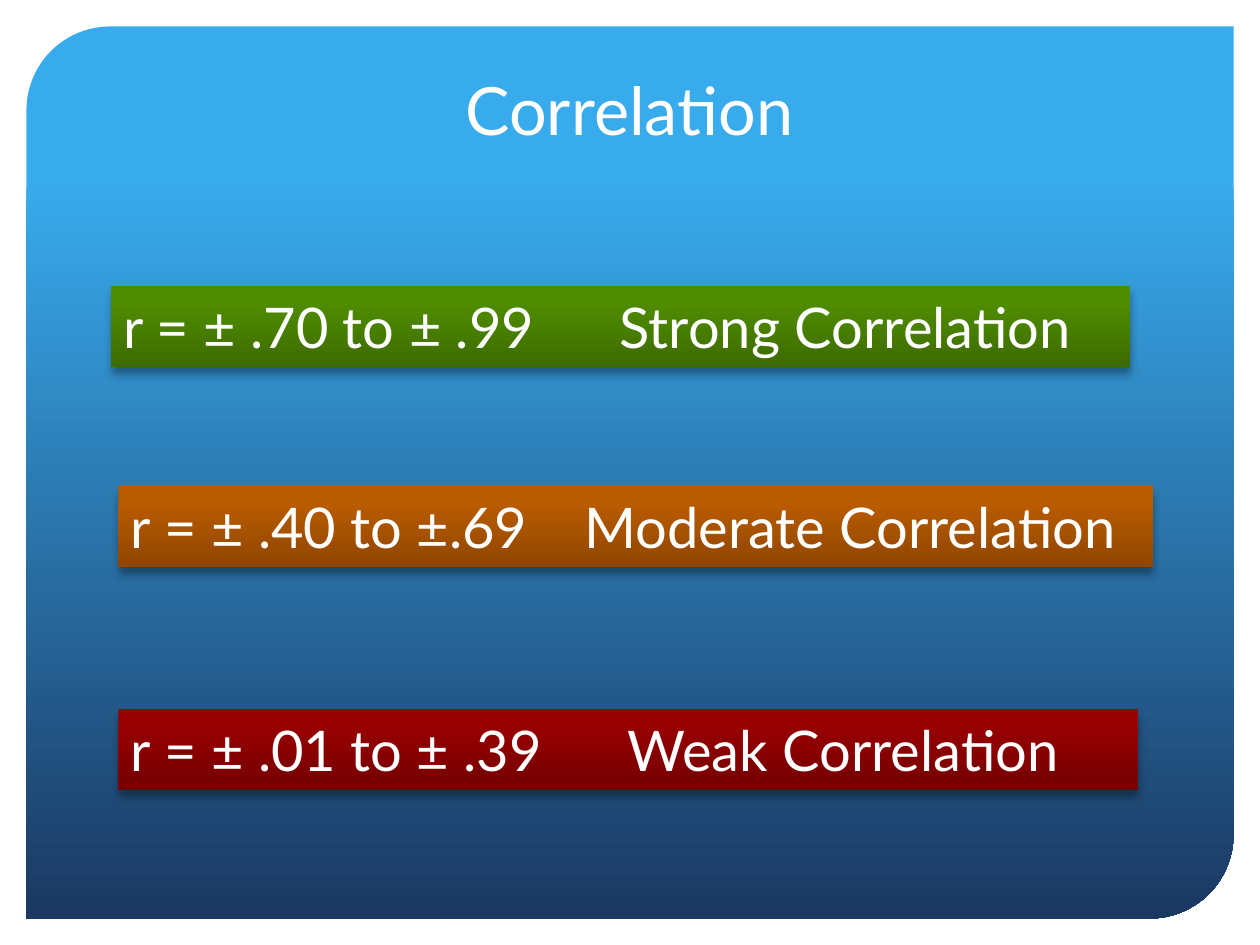
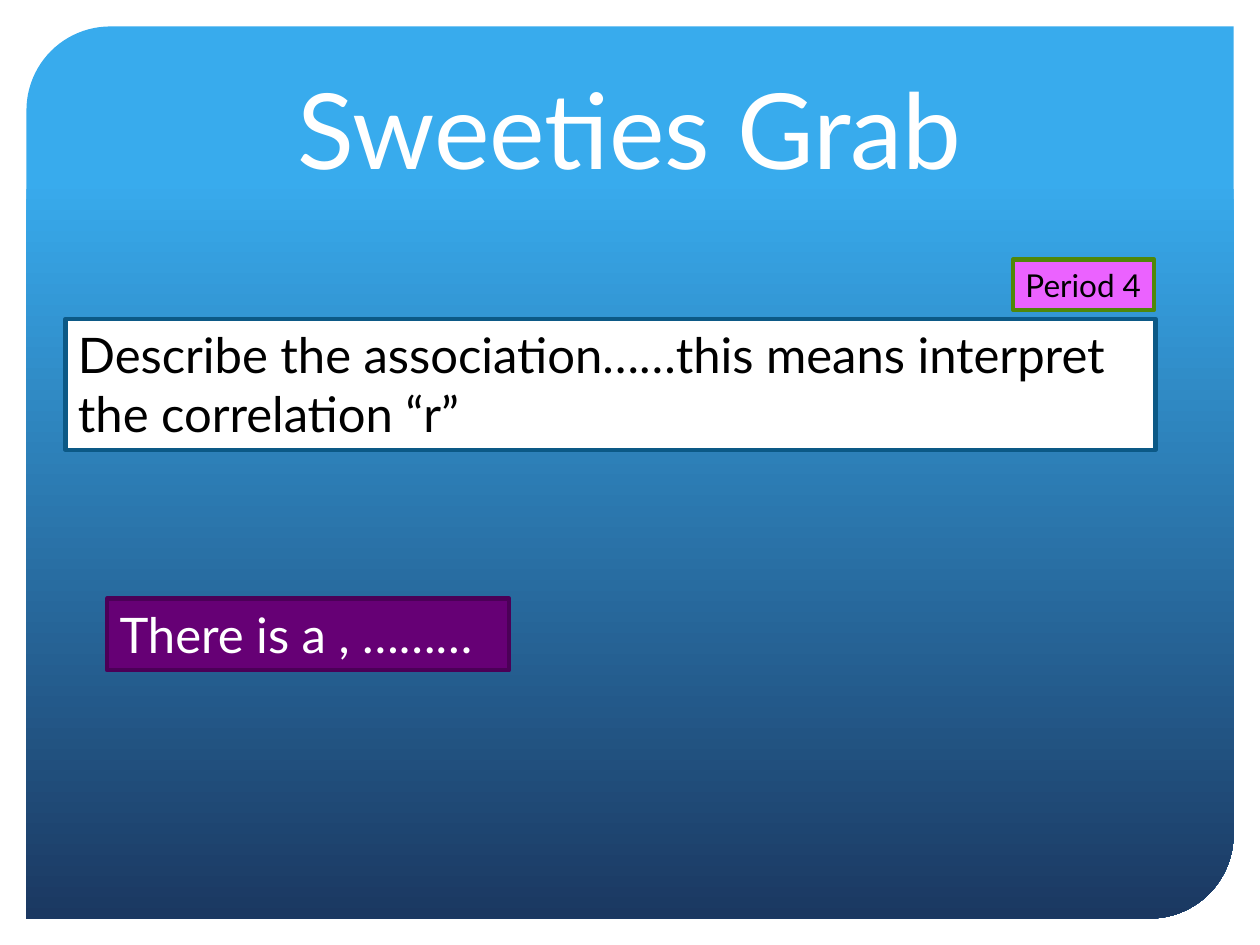
from lxml import etree
from pptx import Presentation
from pptx.dml.color import RGBColor
from pptx.enum.shapes import MSO_SHAPE
from pptx.enum.text import MSO_ANCHOR, MSO_AUTO_SIZE, PP_ALIGN
from pptx.oxml.ns import qn
from pptx.util import Inches, Pt

RECT, PANEL = MSO_SHAPE.RECTANGLE, MSO_SHAPE.ROUND_2_DIAG_RECTANGLE
TOP, BOTTOM = MSO_ANCHOR.TOP, MSO_ANCHOR.BOTTOM
GROW, FIXED = MSO_AUTO_SIZE.SHAPE_TO_FIT_TEXT, MSO_AUTO_SIZE.NONE
LEFT, CENTER = PP_ALIGN.LEFT, PP_ALIGN.CENTER

# Shared look
W, H = 10, 7.5
MARGIN = 0.21
FONT, WHITE, BLACK = "Lato", "FFFFFF", "000000"
PANEL_STOPS = ((17, "38ABED"), (100, "1B3861"))
TITLE_LEFT, TITLE_W = 0.85, 8.29

# Slide 1: range, strength, left, top, width, tab stop, light and dark colour
STRENGTHS = [
    ("r = ± .70 to ± .99", "Strong Correlation", 0.88, 2.27, 8.09, 3.94, "4F8C00", "3D6B00"),
    ("r = ± .40 to ±.69", "Moderate Correlation", 0.94, 3.86, 8.21, 3.6, "B95B00", "8F4600"),
    ("r = ± .01 to ± .39", "Weak Correlation", 0.94, 5.63, 8.09, 3.94, "970001", "740001"),
]
BAND_H = 0.64

# Slide 2: text, place, size, text colour, fill, line, wrap
PROMPTS = [
    ("There is a , ………", (0.85, 4.75, 3.19, 0.57), 28, WHITE, "660075", "4B0057", True),
    ("Describe the association……this means interpret the correlation “r”",
     (0.52, 2.53, 8.65, 1.04), 28, BLACK, WHITE, "0C5986", True),
    ("Period 4", (8.04, 2.06, 1.12, 0.4), 18, BLACK, "EB62FF", "508709", False),
]


def rgb(color):
    return RGBColor.from_string(color)


def add_box(s, kind, place):
    sp = s.shapes.add_shape(kind, *map(Inches, place))
    sp.shadow.inherit = False
    sp.line.fill.background()
    return sp


def fill_gradient(sp, stops):
    """Fill from top to bottom with two (percent, colour) stops."""
    sp.fill.gradient()
    sp.fill.gradient_angle = 270
    for stop, (percent, color) in zip(sp.fill.gradient_stops, stops):
        stop.position = percent / 100
        stop.color.rgb = rgb(color)


def add_shadow(sp):
    effects = sp.element.spPr.find(qn("a:effectLst"))
    shadow = etree.SubElement(effects, qn("a:outerShdw"), blurRad=str(Pt(5)),
                              dist=str(Pt(4)), dir="5400000", rotWithShape="0")
    color = etree.SubElement(shadow, qn("a:srgbClr"), val=BLACK)
    etree.SubElement(color, qn("a:alpha"), val="35000")


def write(sp, text, size, color=WHITE, align=LEFT, anchor=TOP, fit=GROW, wrap=True, tab=None):
    tf = sp.text_frame
    tf.word_wrap, tf.auto_size, tf.vertical_anchor = wrap, fit, anchor
    p = tf.paragraphs[0]
    p.alignment = align
    if tab:
        tabs = etree.SubElement(p._p.get_or_add_pPr(), qn("a:tabLst"))
        etree.SubElement(tabs, qn("a:tab"), pos=str(Inches(tab)), algn="l")
    r = p.add_run()
    r.text = text
    r.font.name, r.font.size = FONT, Pt(size)
    r.font.color.rgb = rgb(color)


def add_slide(prs, title, top, height, size):
    s = prs.slides.add_slide(prs.slide_layouts[5])
    sp = s.shapes.title
    sp.left, sp.top, sp.width, sp.height = map(Inches, (TITLE_LEFT, top, TITLE_W, height))
    write(sp, title, size, align=CENTER, anchor=BOTTOM, fit=FIXED)
    return s


def add_panel(s):
    """Draw the blue panel once, on the layout behind every title."""
    sp = add_box(s, PANEL, (MARGIN, MARGIN, W - 2 * MARGIN, H - 2 * MARGIN))
    sp.adjustments[0], sp.adjustments[1] = 0.094, 0
    fill_gradient(sp, PANEL_STOPS)
    sp.element.nvSpPr.cNvPr.set("id", "20")
    s.slide_layout.shapes[0].element.addprevious(sp.element)


def main():
    prs = Presentation()
    prs.slide_width, prs.slide_height = Inches(W), Inches(H)

    # Slide 1: strength bands
    s = add_slide(prs, "Correlation", 0.59, 0.64, 38)
    add_panel(s)
    for values, strength, left, top, width, tab, light, dark in STRENGTHS:
        sp = add_box(s, RECT, (left, top, width, BAND_H))
        fill_gradient(sp, ((20, light), (100, dark)))
        add_shadow(sp)
        write(sp, f"{values}\t{strength}", 32, tab=tab)

    # Slide 2: task prompts
    s = add_slide(prs, "Sweeties Grab", 0.42, 1.14, 60)
    for text, place, size, color, fill, line, wrap in PROMPTS:
        sp = add_box(s, RECT, place)
        sp.fill.solid()
        sp.fill.fore_color.rgb = rgb(fill)
        sp.line.color.rgb = rgb(line)
        sp.line.width = Pt(2.5)
        write(sp, text, size, color, wrap=wrap)

    prs.save("out.pptx")


if __name__ == "__main__":
    main()
